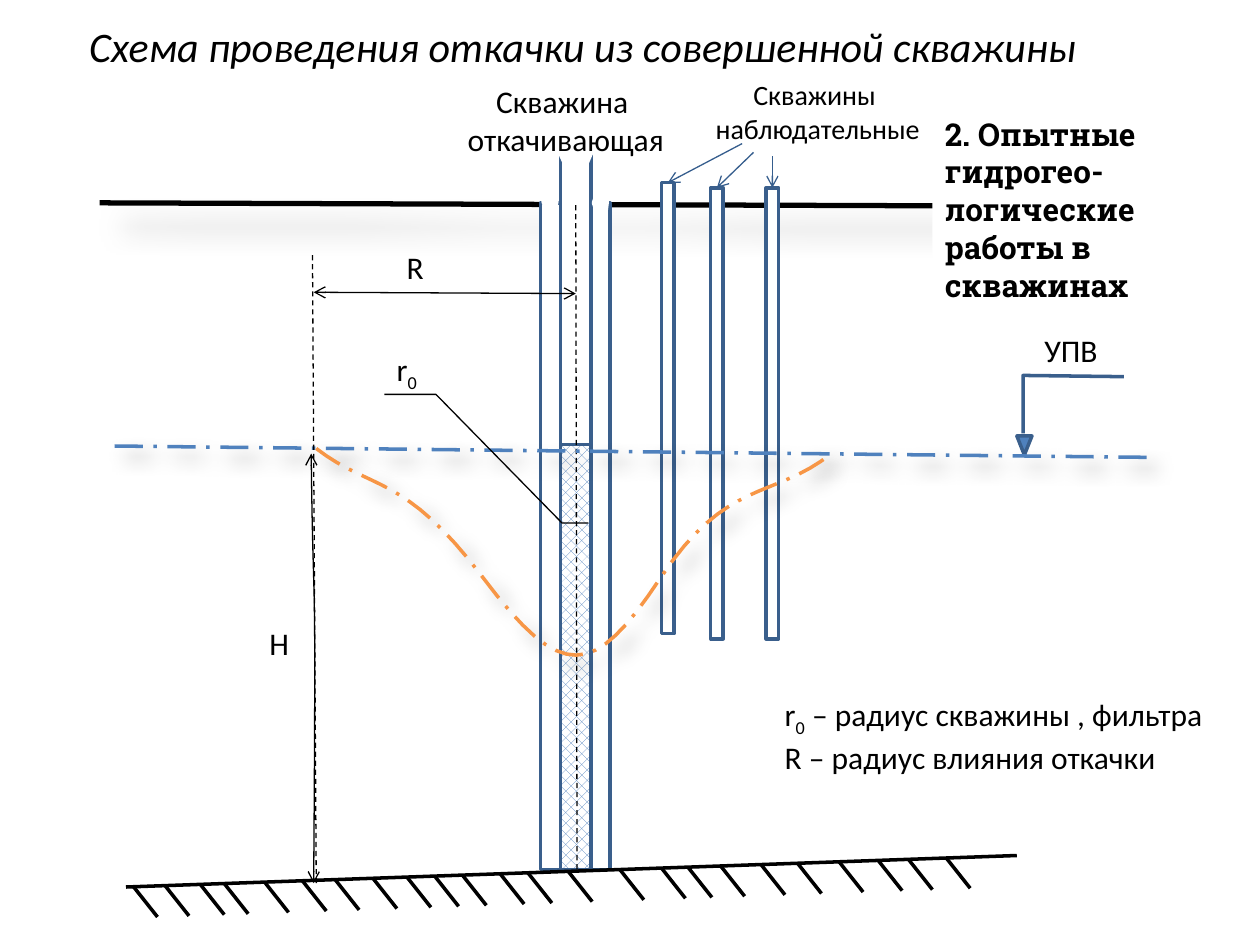
from lxml.etree import SubElement
from pptx import Presentation
from pptx.dml.color import RGBColor
from pptx.enum.dml import MSO_LINE, MSO_PATTERN
from pptx.enum.shapes import MSO_CONNECTOR, MSO_SHAPE
from pptx.enum.text import MSO_AUTO_SIZE, PP_ALIGN
from pptx.oxml.ns import qn
from pptx.util import Inches, Pt

BLACK = RGBColor(0x00, 0x00, 0x00)
WHITE = RGBColor(0xFF, 0xFF, 0xFF)
BLUE = RGBColor(0x4F, 0x81, 0xBD)
PIPE_BLUE = RGBColor(0x3A, 0x5F, 0x8C)
ARROW_BLUE = RGBColor(0x35, 0x5D, 0x8D)
ORANGE = RGBColor(0xF7, 0x96, 0x46)

# Shadows as (opacity %, blur pt, distance pt)
GROUND_SHADOW = (26, 15, 18)
WATER_SHADOW = (35, 10.2, 8)


def bezier(start, *segments, steps=16):
    """Points along joined cubic curves; each segment is two controls and an end."""
    points = [start]
    for c1, c2, end in segments:
        p0 = points[-1]
        for step in range(1, steps + 1):
            t = step / steps
            u = 1 - t
            points.append(tuple(
                u**3 * a + 3 * u * u * t * b + 3 * u * t * t * c + t**3 * d
                for a, b, c, d in zip(p0, c1, c2, end)))
    return points


class Diagram:
    font = "Calibri"

    def __init__(self, slide):
        self.slide = slide
        self.shapes = slide.shapes

    def open_group(self):
        self.shapes = self.slide.shapes.add_group_shape().shapes

    def close_group(self):
        self.shapes = self.slide.shapes

    def style(self, item, color, width, dash=None, arrows="", shadow=None):
        item.line.color.rgb = color
        item.line.width = Pt(width)
        if dash:
            item.line.dash_style = dash
        line_xml = item.line._get_or_add_ln()
        for end in ("headEnd", "tailEnd"):
            if end[:4] in arrows:
                SubElement(line_xml, qn(f"a:{end}"), type="arrow")
        properties = item._element.spPr
        effects = properties.find(qn("a:effectLst"))
        if effects is None:
            effects = SubElement(properties, qn("a:effectLst"))
        if shadow:
            opacity, blur, distance = shadow
            outer = SubElement(effects, qn("a:outerShdw"), blurRad=str(Pt(blur)),
                               dist=str(Pt(distance)), dir=str(45 * 60000),
                               algn="tl", rotWithShape="0")
            tone = SubElement(outer, qn("a:srgbClr"), val=str(BLACK))
            SubElement(tone, qn("a:alpha"), val=str(opacity * 1000))
        return item

    def line(self, start, end, color=BLACK, width=0.75, **look):
        connector = self.shapes.add_connector(
            MSO_CONNECTOR.STRAIGHT, *map(Inches, (*start, *end)))
        return self.style(connector, color, width, **look)

    def outline(self, points, color=BLACK, width=0.75, fill=None, **look):
        start, *rest = [(Inches(x), Inches(y)) for x, y in points]
        builder = self.shapes.build_freeform(*start)
        builder.add_line_segments(rest, close=fill is not None)
        shape = builder.convert_to_shape()
        shape.shadow.inherit = False
        if fill is None:
            shape.fill.background()
        else:
            shape.fill.solid()
            shape.fill.fore_color.rgb = fill
        return self.style(shape, color, width, **look)

    def block(self, box, fill=WHITE, kind=MSO_SHAPE.RECTANGLE, woven=False):
        shape = self.shapes.add_shape(kind, *map(Inches, box))
        shape.shadow.inherit = False
        if woven:
            shape.fill.patterned()
            shape.fill.pattern = MSO_PATTERN.WEAVE
            shape.fill.back_color.rgb = WHITE
        else:
            shape.fill.solid()
        shape.fill.fore_color.rgb = fill
        return self.style(shape, PIPE_BLUE, 2)

    def text(self, box, *lines, size=18, wrap=False, align=PP_ALIGN.LEFT,
             font=None, bold=False, italic=False, fill=None):
        """Each line is a string or a tuple whose second part is a subscript."""
        label = self.shapes.add_textbox(*map(Inches, box))
        if fill is not None:
            label.fill.solid()
            label.fill.fore_color.rgb = fill
        frame = label.text_frame
        frame.word_wrap = wrap
        frame.auto_size = MSO_AUTO_SIZE.SHAPE_TO_FIT_TEXT
        for index, line in enumerate(lines):
            paragraph = frame.add_paragraph() if index else frame.paragraphs[0]
            paragraph.alignment = align
            face = paragraph.font
            face.name, face.size = font or self.font, Pt(size)
            face.bold, face.italic = bold, italic
            face.color.rgb = BLACK
            for part, words in enumerate((line,) if isinstance(line, str) else line):
                run = paragraph.add_run()
                run.text = words
                if part == 1:
                    run.font._element.set("baseline", "-25000")


def main():
    prs = Presentation()
    prs.slide_width, prs.slide_height = Inches(10), Inches(7.5)
    d = Diagram(prs.slides.add_slide(prs.slide_layouts[6]))

    # Ground surface and groundwater level mark
    d.line((0.79, 1.61), (9.24, 1.64), width=3, shadow=GROUND_SHADOW)
    d.block((8.07, 3.46, 0.12, 0.15), BLUE, MSO_SHAPE.FLOWCHART_MERGE)
    d.outline([(8.12, 3.44), (8.12, 2.98), (8.92, 2.99)], PIPE_BLUE, 2)
    d.text((8.19, 2.58, 0.63, 0.4), "УПВ")

    # Pumping well: casing, pipe and white breaks at the top
    d.open_group()
    d.block((4.29, 1.61, 0.55, 5.29))
    d.block((4.45, 1.23, 0.24, 5.67))
    breaks = (
        [(4.34, 1.48), (4.31, 1.6), (4.38, 1.81), (4.39, 1.76), (4.42, 1.6)],
        [(4.75, 1.49), (4.71, 1.61), (4.78, 1.81), (4.8, 1.76), (4.82, 1.6)],
        [(4.31, 1.03), (4.37, 1.08), (4.4, 1.12), (4.55, 1.45), (4.61, 1.41),
         (4.78, 1.02)],
    )
    for points in breaks:
        d.outline(points, WHITE, 2, fill=WHITE)
    d.close_group()

    # Head H and influence radius R
    d.outline(bezier((2.47, 3.6), ((2.49, 5.19), (2.51, 4.07), (2.49, 7.01))),
              arrows="head tail")
    d.text((2.04, 4.9, 0.36, 0.4), "H")
    d.text((3.13, 1.92, 0.4, 0.4), "R")

    # Filter and well axis
    d.block((4.45, 3.53, 0.24, 3.37), BLUE, woven=True)
    d.line((4.58, 6.9), (4.57, 1.62), dash=MSO_LINE.DASH)

    # Observation wells
    wells = [d.block((left, top, 0.1, 3.58))
             for left, top in ((5.25, 1.45), (5.64, 1.49), (6.08, 1.49))]

    # Water table and depression curve
    d.open_group()
    water = dict(width=2, dash=MSO_LINE.LONG_DASH_DOT, shadow=WATER_SHADOW)
    d.line((0.91, 3.54), (9.13, 3.63), BLUE, **water)
    depression = bezier((2.51, 3.56),
                        ((2.95, 3.9), (3.2, 3.75), (3.83, 4.58)),
                        ((4.46, 5.42), (4.71, 5.39), (5.24, 4.59)),
                        ((5.77, 3.79), (6.13, 3.97), (6.6, 3.6)))
    d.outline(depression, ORANGE, **water)
    d.close_group()

    # Well names with arrows
    d.text((3.6, 0.6, 1.78, 0.71), "Скважина ", "откачивающая",
           align=PP_ALIGN.CENTER)
    d.text((5.57, 0.57, 1.84, 0.64), "Скважины ", "наблюдательные",
           size=16, align=PP_ALIGN.CENTER)
    for well, start in zip(wells, ((5.89, 1.14), (5.98, 1.21), (6.13, 1.24))):
        arrow = d.line(start, start, ARROW_BLUE, arrows="tail")
        arrow.end_connect(well, 0)

    # Well radius callout
    d.outline([(4.67, 4.15), (4.46, 4.15), (3.46, 3.13), (3.05, 3.13)])
    d.text((3.05, 2.73, 0.38, 0.4), ("r", "0"))

    # Impermeable base with hatching along its slope
    d.open_group()
    d.line((1, 7.04), (8.07, 6.79), width=2)
    hatch_lefts = (1.06, 1.31, 1.59, 1.78, 2.1, 2.4, 2.66, 2.96, 3.23, 3.45, 3.67, 3.97,
                   4.19, 4.51, 4.92, 5.25, 5.46, 5.72, 6.04, 6.33, 6.66, 6.97, 7.21, 7.51)
    for x in hatch_lefts:
        y = 7.04 - (x - 1) * 0.25 / 7.07
        d.line((x, y), (x + 0.19, y + 0.24), width=2)
    d.close_group()

    # Title and legend
    d.text((0.61, 0.11, 9.17, 0.5),
           "Схема проведения откачки из совершенной скважины",
           size=24, wrap=True, italic=True)
    d.text((6.13, 5.47, 3.57, 0.71), ("r", "0", " – радиус скважины , фильтра"),
           "R – радиус влияния откачки")

    # Radius dimension and its boundary
    d.line((2.49, 2.32), (4.57, 2.33), arrows="head tail")
    d.line((2.51, 7.01), (2.48, 2.01), dash=MSO_LINE.DASH)

    # Section heading
    d.text((7.4, 0.86, 2.52, 1.62),
           "2. Опытные гидрогео-логические работы в скважинах",
           wrap=True, font="Roboto Slab", bold=True, fill=WHITE)

    prs.save("out.pptx")


if __name__ == "__main__":
    main()
